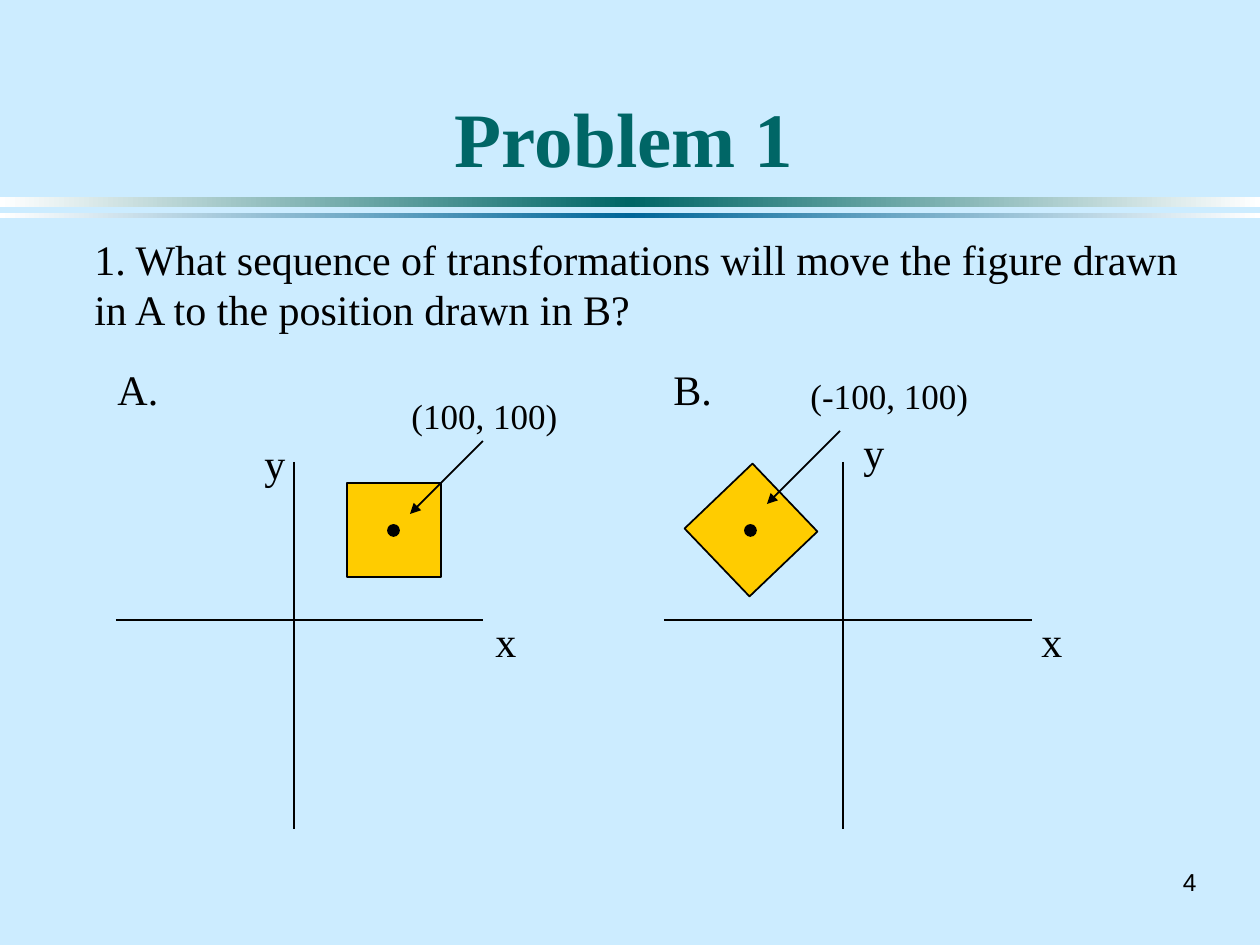
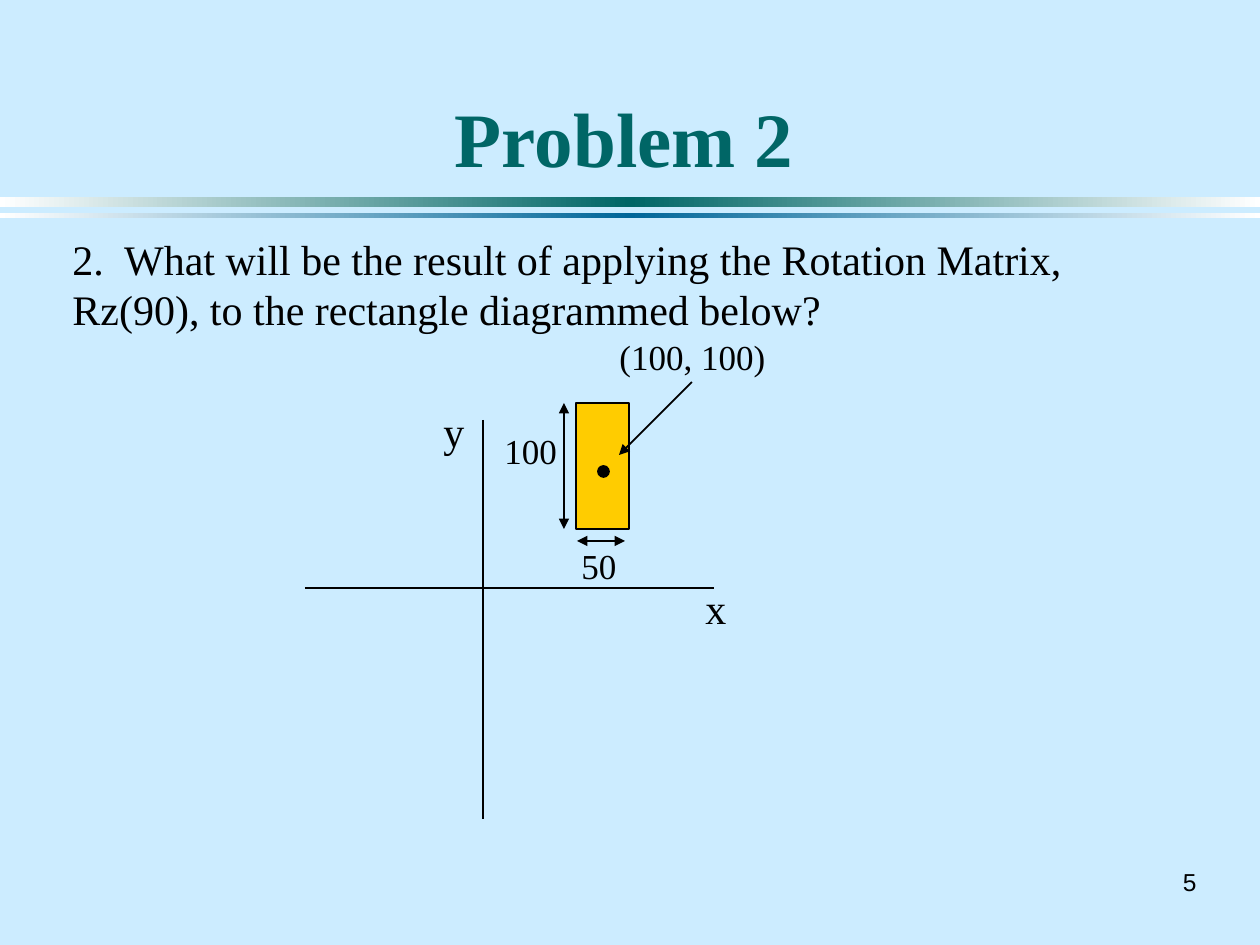
import copy
from dataclasses import dataclass

import lxml.etree
import pptx
import pptx.dml.color
import pptx.enum.shapes
import pptx.enum.text
import pptx.oxml.ns
import pptx.util

PX_PER_INCH = 126
WIDTH, HEIGHT = 1260, 945
SERIF, SANS = "Times New Roman", "Arial"
SKY, TEAL, BLUE, GOLD = "CCECFF", "006666", "006699", "FFCC00"
BLACK, WHITE = "000000", "FFFFFF"
BODY_SIZE, NOTE_SIZE = 24, 20
DOT_SIZE = 11
POINTER_REACH = 73

Align = pptx.enum.text.PP_ALIGN
Anchor = pptx.enum.text.MSO_ANCHOR
Preset = pptx.enum.shapes.MSO_SHAPE
Point = tuple[int, int]


@dataclass(frozen=True)
class Area:
    left: int
    top: int
    width: int
    height: int


@dataclass(frozen=True)
class Label:
    text: str
    area: Area
    size: int = BODY_SIZE
    font: str = SERIF
    color: str = BLACK
    bold: bool = False
    wrap: bool = True
    align: Align = Align.LEFT
    anchor: Anchor = Anchor.TOP


@dataclass(frozen=True)
class Stroke:
    start: Point
    end: Point
    head: bool = False
    tail: bool = False


@dataclass(frozen=True)
class Band:
    area: Area
    color: str


@dataclass(frozen=True)
class Plot:
    origin: Point
    x_range: Point
    y_range: Point
    x_name: Point
    y_name: Point
    figure: Area
    dot: Point
    pointer: Point
    position: str
    position_at: Point
    turn: float = 0


@dataclass(frozen=True)
class Problem:
    title: str
    number: str
    question: Label
    plots: tuple[Plot, ...]
    labels: tuple[Label, ...] = ()
    measures: tuple[Stroke, ...] = ()


BANDS = (
    Band(Area(0, 197, WIDTH, 10), TEAL),
    Band(Area(0, 213, WIDTH, 5), BLUE),
)

PROBLEMS = (
    Problem(
        "Problem 1", "4",
        Label("1. What sequence of transformations will move the figure drawn "
              "in A to the position drawn in B?", Area(82, 227, 1137, 113)),
        plots=(
            Plot((294, 620), (116, 483), (462, 829), (483, 609), (252, 431),
                 Area(347, 483, 94, 94), (388, 525), (483, 441),
                 "(100, 100)", (399, 388)),
            Plot((843, 620), (664, 1032), (462, 829), (1029, 609), (851, 420),
                 Area(704, 483, 94, 94), (745, 525), (840, 431),
                 "(-100, 100)", (798, 368), turn=316.3),
        ),
        labels=(
            Label("A.", Area(105, 357, 67, 63), wrap=False),
            Label("B.", Area(661, 357, 64, 63), wrap=False),
        ),
    ),
    Problem(
        "Problem 2", "5",
        Label("2.  What will be the result of applying the Rotation Matrix, "
              "Rz(90), to the rectangle diagrammed below?",
              Area(60, 227, 1125, 113)),
        plots=(
            Plot((483, 588), (305, 714), (420, 819), (693, 576), (431, 399),
                 Area(576, 403, 53, 126), (598, 466), (692, 382),
                 "(100, 100)", (607, 329)),
        ),
        labels=(
            Label("100", Area(492, 423, 78, 54), NOTE_SIZE, wrap=False),
            Label("50", Area(569, 538, 60, 54), NOTE_SIZE, wrap=False),
        ),
        measures=(
            Stroke((564, 403), (564, 529), head=True, tail=True),
            Stroke((577, 541), (625, 541), head=True, tail=True),
        ),
    ),
)


def px(length: int) -> pptx.util.Emu:
    return pptx.util.Emu(round(length * 914400 / PX_PER_INCH))


def place(area: Area) -> list[pptx.util.Emu]:
    return [px(n) for n in (area.left, area.top, area.width, area.height)]


def rgb(color: str) -> pptx.dml.color.RGBColor:
    return pptx.dml.color.RGBColor.from_string(color)


def draw_label(page, label: Label) -> None:
    box = page.shapes.add_textbox(*place(label.area))
    frame = box.text_frame
    frame.text = label.text
    frame.word_wrap = label.wrap
    frame.vertical_anchor = label.anchor
    para = frame.paragraphs[0]
    para.alignment = label.align
    for span in para.runs:
        span.font.name = label.font
        span.font.size = pptx.util.Pt(label.size)
        span.font.bold = label.bold
        span.font.color.rgb = rgb(label.color)


def draw_shape(page, preset: Preset, area: Area, color: str, turn: float = 0) -> None:
    shape = page.shapes.add_shape(preset, *place(area))
    shape.shadow.inherit = False
    shape.rotation = turn
    shape.fill.solid()
    shape.fill.fore_color.rgb = rgb(color)
    shape.line.color.rgb = rgb(BLACK)
    shape.line.width = pptx.util.Pt(1)


def draw_band(page, band: Band) -> None:
    shape = page.shapes.add_shape(Preset.RECTANGLE, *place(band.area))
    shape.shadow.inherit = False
    shape.line.fill.background()
    shape.fill.gradient()
    shape.fill.gradient_angle = 0
    stop_list = shape.element.spPr.find(".//" + pptx.oxml.ns.qn("a:gsLst"))
    stop_list.append(copy.deepcopy(stop_list[0]))
    for index, (stop, color) in enumerate(
            zip(shape.fill.gradient_stops, (WHITE, band.color, WHITE))):
        stop.position = index / 2
        stop.color.rgb = rgb(color)


def draw_stroke(page, stroke: Stroke) -> None:
    line = page.shapes.add_connector(
        pptx.enum.shapes.MSO_CONNECTOR.STRAIGHT,
        *(px(n) for n in stroke.start + stroke.end))
    line.line.color.rgb = rgb(BLACK)
    line.line.width = pptx.util.Pt(1)
    outline = line.line._get_or_add_ln()
    for tag, shown in (("a:headEnd", stroke.head), ("a:tailEnd", stroke.tail)):
        if shown:
            lxml.etree.SubElement(outline, pptx.oxml.ns.qn(tag), type="triangle")
    lxml.etree.SubElement(line.element.spPr, pptx.oxml.ns.qn("a:effectLst"))


def draw_plot(page, plot: Plot) -> None:
    axis_x, axis_y = plot.origin
    left, right = plot.x_range
    top, bottom = plot.y_range
    draw_stroke(page, Stroke((axis_x, top), (axis_x, bottom)))
    draw_stroke(page, Stroke((left, axis_y), (right, axis_y)))
    for name, corner in (("x", plot.x_name), ("y", plot.y_name)):
        draw_label(page, Label(name, Area(*corner, 32, 63)))
    draw_shape(page, Preset.RECTANGLE, plot.figure, GOLD, plot.turn)
    draw_shape(page, Preset.OVAL, Area(*plot.dot, DOT_SIZE, DOT_SIZE), BLACK)
    draw_label(page, Label(plot.position, Area(*plot.position_at, 260, 54), NOTE_SIZE))
    start_x, start_y = plot.pointer
    tip = (start_x - POINTER_REACH, start_y + POINTER_REACH)
    draw_stroke(page, Stroke(plot.pointer, tip, tail=True))


def draw_frame(page, title: str, number: str) -> None:
    page.background.fill.solid()
    page.background.fill.fore_color.rgb = rgb(SKY)
    for band in BANDS:
        draw_band(page, band)
    draw_label(page, Label(number, Area(1155, 861, 54, 42), 14, SANS, wrap=False,
                           align=Align.RIGHT, anchor=Anchor.MIDDLE))
    draw_label(page, Label(title, Area(84, 32, 1081, 157), 44, color=TEAL, bold=True,
                           align=Align.CENTER, anchor=Anchor.BOTTOM))


def draw_problem(page, problem: Problem) -> None:
    draw_frame(page, problem.title, problem.number)
    for plot in problem.plots:
        draw_plot(page, plot)
    for label in (problem.question, *problem.labels):
        draw_label(page, label)
    for measure in problem.measures:
        draw_stroke(page, measure)


def main() -> None:
    deck = pptx.Presentation()
    deck.slide_width, deck.slide_height = px(WIDTH), px(HEIGHT)
    for problem in PROBLEMS:
        draw_problem(deck.slides.add_slide(deck.slide_layouts[6]), problem)
    deck.save("out.pptx")


if __name__ == "__main__":
    main()
